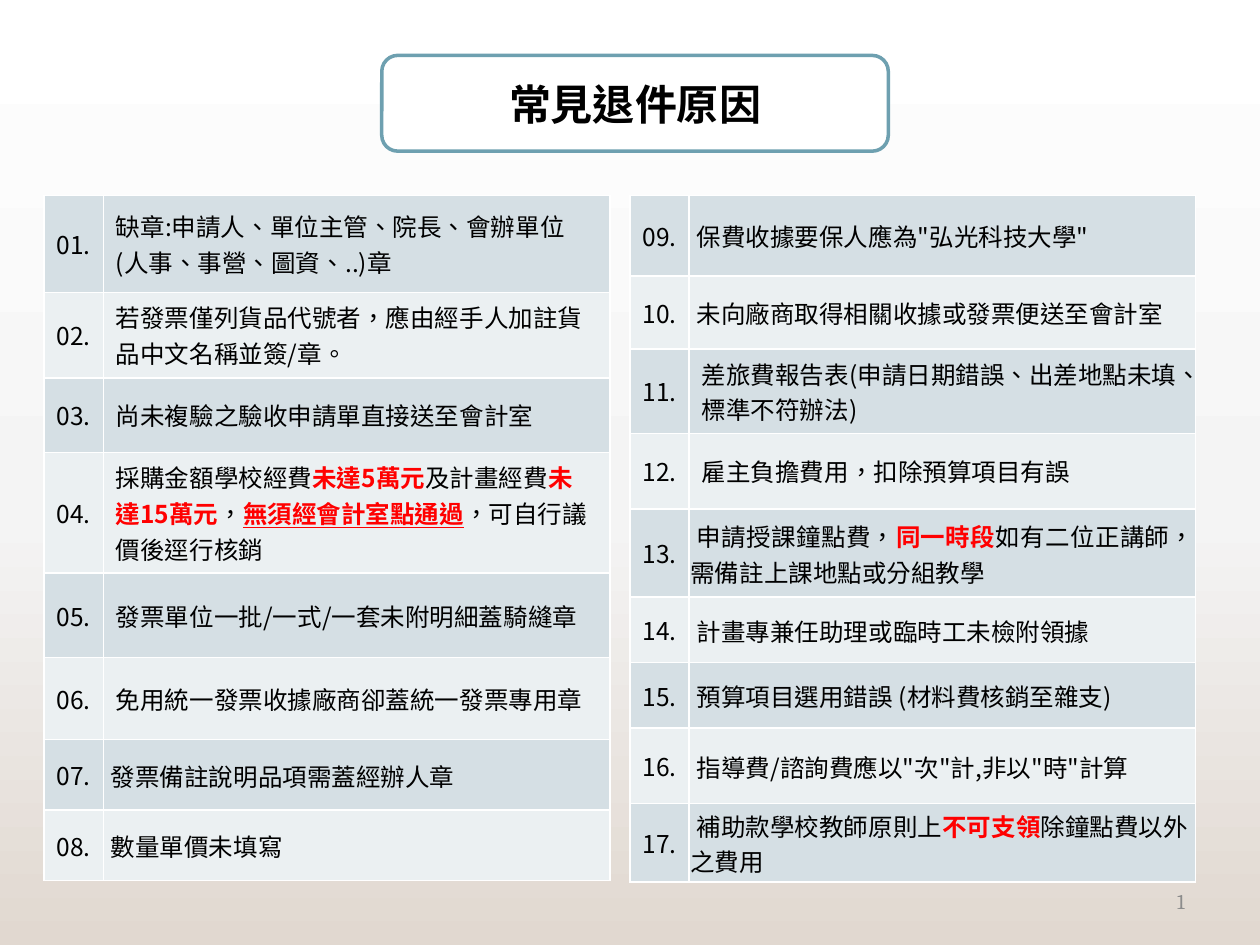
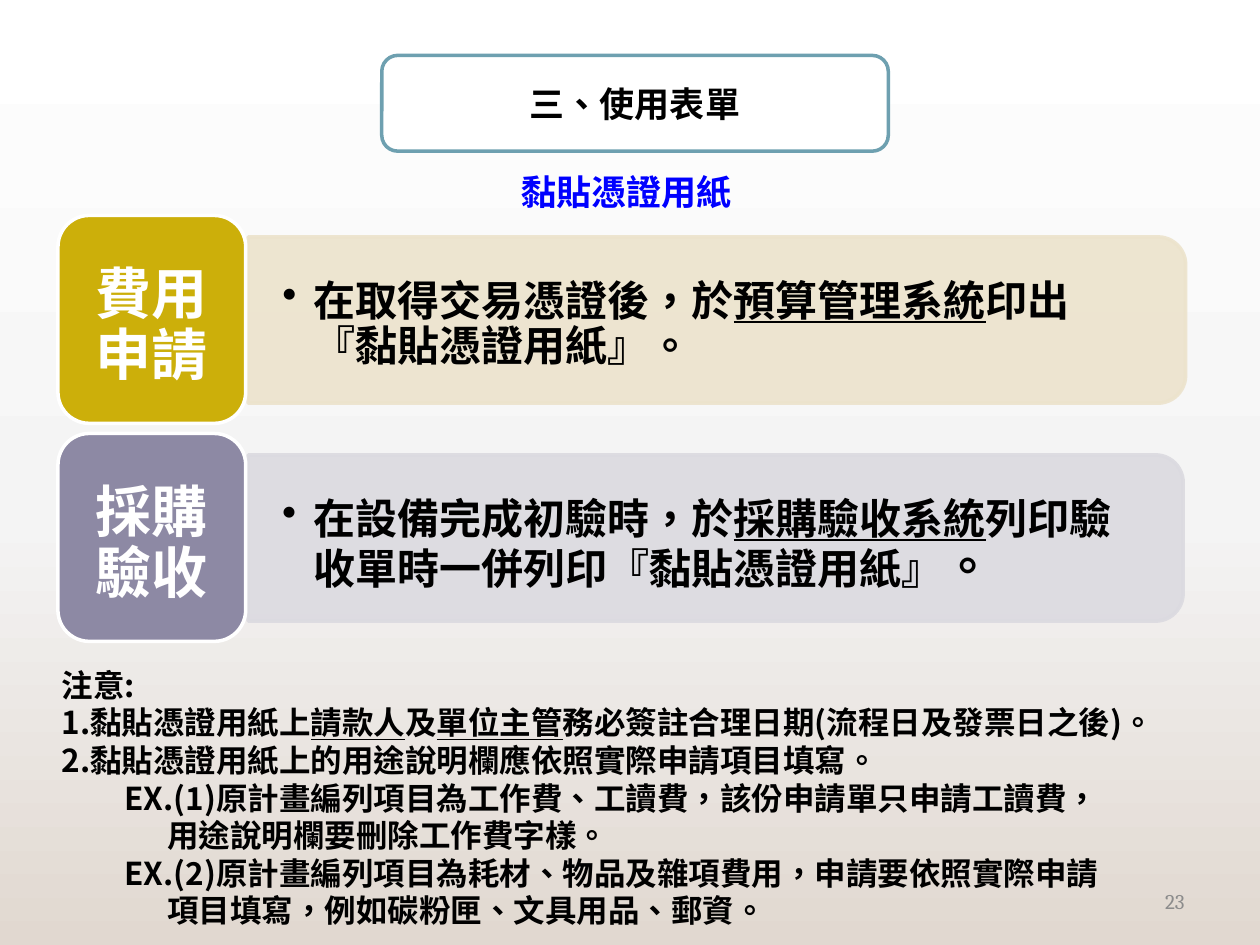
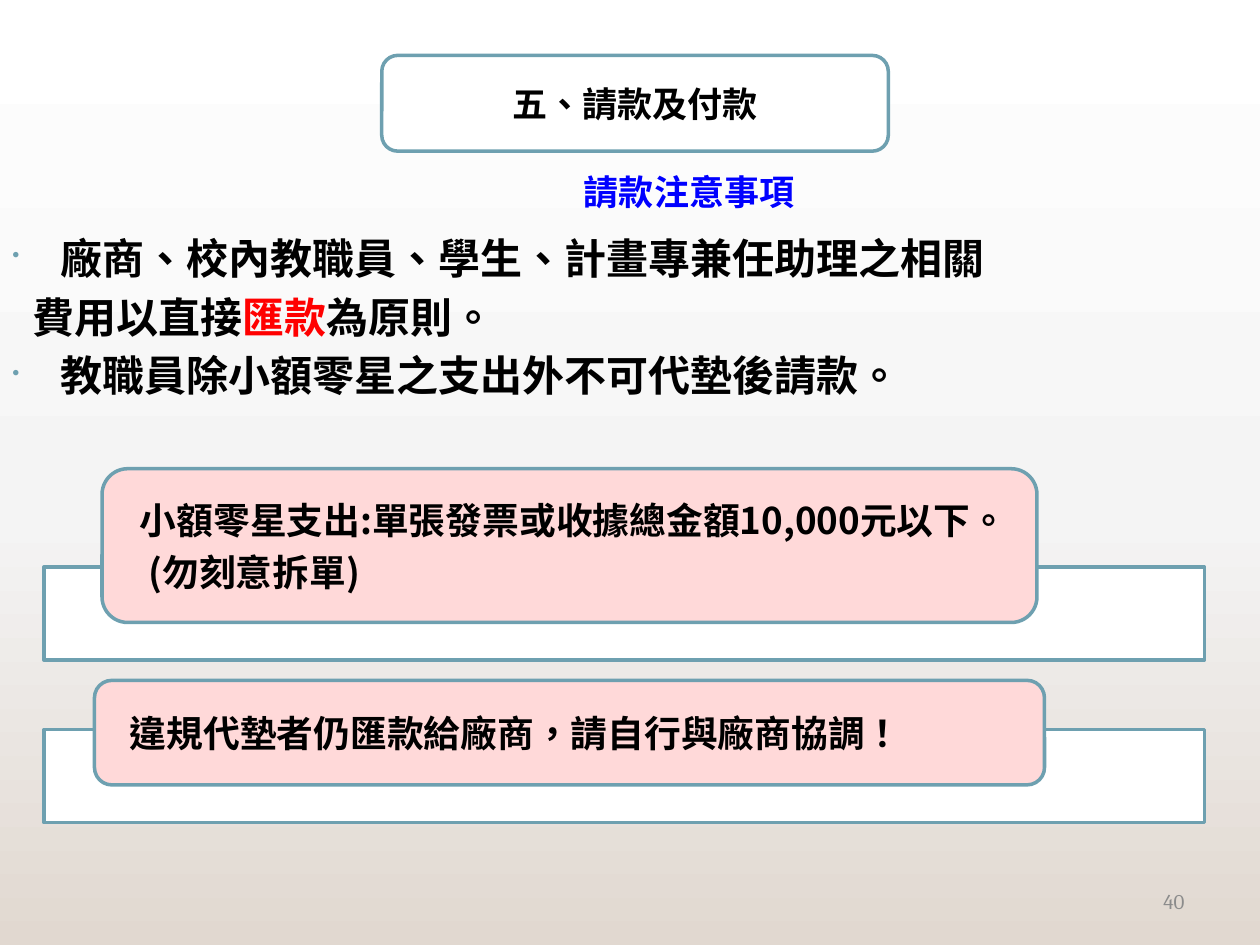
from dataclasses import dataclass

from lxml import etree
from pptx import Presentation
from pptx.dml.color import RGBColor
from pptx.enum.shapes import MSO_SHAPE
from pptx.enum.text import MSO_ANCHOR, PP_ALIGN
from pptx.oxml.ns import qn
from pptx.util import Inches, Pt

ROUND = MSO_SHAPE.ROUNDED_RECTANGLE
RECT = MSO_SHAPE.RECTANGLE
TAB = MSO_SHAPE.ROUND_2_SAME_RECTANGLE
MIDDLE, TOP = MSO_ANCHOR.MIDDLE, MSO_ANCHOR.TOP
LEFT, CENTER, RIGHT, JUSTIFY = PP_ALIGN.LEFT, PP_ALIGN.CENTER, PP_ALIGN.RIGHT, PP_ALIGN.JUSTIFY

COLORS = {
    "white": "FFFFFF", "black": "000000", "red": "FF0000", "blue": "0000FF",
    "gray": "8C8C8C", "teal": "6EA0B0", "pink": "FFD9D9",
    "row_dark": "D5DFE4", "row_light": "EBF0F2",
    "gold": "CCAF0A", "gold_pale": "ECE3CC",
    "violet": "8D89A4", "violet_pale": "DBDAE0",
}
BACKDROP = [(0, "FFFFFF"), (55000, "F4F4F4"), (100000, "E1D8D0")]
CJK, SERIF = "Noto Sans CJK SC", "Cambria"
COLUMNS, ROWS = 100, 75
INSETS = (0.1, 0.05, 0.1, 0.05)
RED = {"color": "red", "bold": True}
RED_LINE = {"color": "red", "bold": True, "underline": True}
UNDERLINE = {"underline": True}


def rgb(name):
    return RGBColor.from_string(COLORS[name])


def sub(parent, tag, **attributes):
    return etree.SubElement(parent, qn(tag), attributes)


@dataclass
class Para:
    runs: list
    left: float = 0
    first: float = 0
    bullet: str = ""
    bullet_color: str = ""
    align: PP_ALIGN = None


class Deck:
    def __init__(self):
        self.prs = Presentation()
        self.prs.slide_width, self.prs.slide_height = Inches(10), Inches(7.5)
        self.cell_w = self.prs.slide_width / COLUMNS
        self.cell_h = self.prs.slide_height / ROWS
        self.slide = None
        self.paint_backdrop()

    def paint_backdrop(self):
        master = self.prs.slide_master
        fill = master.background.fill
        fill.gradient()
        fill.gradient_angle = 270
        stops = master.element.find(".//" + qn("a:gsLst"))
        for stop in list(stops):
            stops.remove(stop)
        for position, color in BACKDROP:
            sub(sub(stops, "a:gs", pos=str(position)), "a:srgbClr", val=color)

    def area(self, col, row, width, height):
        return (round(col * self.cell_w), round(row * self.cell_h),
                round(width * self.cell_w), round(height * self.cell_h))

    def new_slide(self, number, title, **title_style):
        self.slide = self.prs.slides.add_slide(self.prs.slide_layouts[6])
        self.text((71.7, 69.5, 23.3, 4), [str(number)], size=12, color="gray",
                  face=SERIF, align=RIGHT)
        self.shape((30.3, 4.4, 40.2, 7.6), "white", "teal", texts=[title],
                   **{"size": 20, "bold": True, "align": CENTER, **title_style})

    def set_paragraphs(self, frame, texts, size=14, color="black", bold=False, face=CJK,
                       align=LEFT, line=None, before=0, after=0):
        for index, item in enumerate(texts):
            para = item if isinstance(item, Para) else Para([item])
            p = frame.paragraphs[0] if index == 0 else frame.add_paragraph()
            p.alignment = para.align or align
            if line:
                p.line_spacing = Pt(line)
            if before and index:
                p.space_before = Pt(before)
            if after and index < len(texts) - 1:
                p.space_after = Pt(after)
            props = p._p.get_or_add_pPr()
            props.set("marL", str(Inches(para.left)))
            props.set("indent", str(Inches(para.first)))
            if para.bullet_color:
                sub(sub(props, "a:buClr"), "a:srgbClr", val=COLORS[para.bullet_color])
                sub(props, "a:buSzPct", val="50000")
            if para.bullet:
                sub(props, "a:buChar", char=para.bullet)
            p.font.size, p.font.bold, p.font.name = Pt(size), bold, face
            p.font.color.rgb = rgb(color)
            defaults = props.find(qn("a:defRPr"))
            defaults.set("lang", "zh-TW")
            sub(defaults, "a:ea", typeface=CJK)
            for part in para.runs:
                words, style = (part, {}) if isinstance(part, str) else part
                run = p.add_run()
                run.text = words
                for key, value in style.items():
                    if key == "color":
                        run.font.color.rgb = rgb(value)
                    else:
                        setattr(run.font, key, value)

    def fill_frame(self, frame, texts, insets=INSETS, anchor=MIDDLE, **style):
        frame.word_wrap = True
        frame.vertical_anchor = anchor
        (frame.margin_left, frame.margin_top,
         frame.margin_right, frame.margin_bottom) = map(Inches, insets)
        self.set_paragraphs(frame, texts, **style)

    def text(self, box, texts, **style):
        holder = self.slide.shapes.add_textbox(*self.area(*box))
        self.fill_frame(holder.text_frame, texts, **style)

    def subtitle(self, col, width, words):
        self.text((col, 13.1, width, 4.2), [words], insets=(0.1, 0, 0.1, 0),
                  size=20, color="blue", bold=True, align=CENTER)

    def shape(self, box, fill, line_color, kind=ROUND, texts=None, **style):
        body = self.slide.shapes.add_shape(kind, *self.area(*box))
        body.shadow.inherit = False
        body.fill.solid()
        body.fill.fore_color.rgb = rgb(fill)
        body.line.color.rgb = rgb(line_color)
        body.line.width = Pt(2)
        if texts:
            self.fill_frame(body.text_frame, texts, **style)
        return body

    def side_tab(self, col, row, width, height, color):
        turned = (col + (width - height) / 2, row + (height - width) / 2, height, width)
        tab = self.shape(turned, color, color, TAB)
        tab.rotation = 90
        for tint in tab.element.spPr.iter(qn("a:srgbClr")):
            sub(tint, "a:alpha", val="90000")

    def step(self, row, width, label, dark, pale, runs, line):
        self.side_tab(19.7, row + 1.7, width, 13.2, pale)
        self.text((19.7, row + 2.7, width - 0.6, 11.9),
                  [Para(runs, 0.25, -0.25, "•")],
                  insets=(0.27, 0.14, 0.27, 0.14), size=24, bold=True, line=line)
        self.shape((4.6, row, 14.9, 16.5), dark, "white", texts=[label],
                   insets=(0.13, 0.1, 0.13, 0), size=32, bold=True,
                   color="white", align=CENTER, line=35)

    def notice(self, box, shelf_row, texts):
        self.shape((3.5, shelf_row, 92.1, 7.4), "white", "teal", RECT)
        self.shape(box, "pink", "teal", texts=texts, insets=(0.24, 0.03, 0.24, 0),
                   size=21, bold=True, line=22.9, after=6.85)

    def reasons(self, col, start, heights, entries, tight):
        widths = (4.7, 40.2)
        frame = self.slide.shapes.add_table(
            len(entries), 2, *self.area(col, 15.5, sum(widths), sum(heights)))
        table = frame.table
        table.first_row = table.horz_banding = False
        for column, width in zip(table.columns, widths):
            column.width = round(width * self.cell_w)
        for index, (height, entry) in enumerate(zip(heights, entries)):
            number = start + index
            table.rows[index].height = round(height * self.cell_h)
            para = entry if isinstance(entry, Para) else Para([entry])
            insets = INSETS
            if number in tight:
                para.first = 0.05
                insets = (0.01, 0.01, 0.01, 0)
            fill = "row_light" if index % 2 else "row_dark"
            self.cell(table.cell(index, 0), f"{number:02d}.", fill, (0.1, 0.05, 0, 0.05))
            self.cell(table.cell(index, 1), para, fill, insets)

    def cell(self, cell, content, fill, insets):
        cell.vertical_anchor = MIDDLE
        (cell.margin_left, cell.margin_top,
         cell.margin_right, cell.margin_bottom) = map(Inches, insets)
        props = cell._tc.get_or_add_tcPr()
        for side in ("a:lnL", "a:lnR", "a:lnT", "a:lnB"):
            border = sub(props, side, w=str(Pt(1)))
            sub(sub(border, "a:solidFill"), "a:srgbClr", val=COLORS["white"])
        cell.fill.solid()
        cell.fill.fore_color.rgb = rgb(fill)
        self.set_paragraphs(cell.text_frame, [content])


def rejection_reasons(deck):
    deck.new_slide(1, "常見退件原因", size=24, face=SERIF)
    deck.reasons(3.5, 1, (7.7, 6.8, 5.9, 9.6, 6.7, 6.5, 5.6, 5.6), [
        "缺章:申請人、單位主管、院長、會辦單位(人事、事營、圖資、..)章",
        "若發票僅列貨品代號者，應由經手人加註貨品中文名稱並簽/章。",
        "尚未複驗之驗收申請單直接送至會計室",
        Para(["採購金額學校經費", ("未達5萬元", RED), "及計畫經費", ("未達15萬元", RED),
              "，", ("無須經會計室點通過", RED_LINE), "，可自行議價後逕行核銷"]),
        "發票單位一批/一式/一套未附明細蓋騎縫章",
        "免用統一發票收據廠商卻蓋統一發票專用章",
        "發票備註說明品項需蓋經辦人章",
        "數量單價未填寫",
    ], {7, 8})
    deck.reasons(50, 9, (6.4, 5.8, 6.7, 6, 7, 5.2, 5.2, 6, 6.2), [
        "保費收據要保人應為\"弘光科技大學\"",
        "未向廠商取得相關收據或發票便送至會計室",
        "差旅費報告表(申請日期錯誤、出差地點未填、標準不符辦法)",
        "雇主負擔費用，扣除預算項目有誤",
        Para(["申請授課鐘點費，", ("同一時段", RED),
              "如有二位正講師，需備註上課地點或分組教學"], align=JUSTIFY),
        "計畫專兼任助理或臨時工未檢附領據",
        "預算項目選用錯誤 (材料費核銷至雜支)",
        "指導費/諮詢費應以\"次\"計,非以\"時\"計算",
        Para(["補助款學校教師原則上", ("不可支領", RED), "除鐘點費以外之費用"]),
    ], {9, 10, 13, 14, 15, 16, 17})


def voucher_form(deck):
    deck.new_slide(23, "三、使用表單")
    deck.step(17.1, 74.4, "費用申請", "gold", "gold_pale",
              ["在取得交易憑證後，於", ("預算管理系統", UNDERLINE),
               "印出『黏貼憑證用紙』。"], 25.7)
    deck.step(34.4, 74.2, "採購驗收", "violet", "violet_pale",
              ["在設備完成初驗時，於", ("採購驗收系統", UNDERLINE),
               "列印驗收單時一併列印『黏貼憑證用紙』",
               ("。", {"size": Pt(28), "name": "Arial"})], 29.7)
    deck.text((3.9, 52, 94.1, 22.6), [
        "注意:",
        Para(["1.黏貼憑證用紙上", ("請款人", UNDERLINE), "及", ("單位主管", UNDERLINE),
              "務必簽註合理日期(流程日及發票日之後)。"]),
        "2.黏貼憑證用紙上的用途說明欄應依照實際申請項目填寫。",
        Para(["EX.(1)原計畫編列項目為工作費、工讀費，該份申請單只申請工讀費，"], 0.5),
        Para(["用途說明欄要刪除工作費字樣。"], 0.84),
        Para(["EX.(2)原計畫編列項目為耗材、物品及雜項費用，申請要依照實際申請"], 0.5),
        Para(["項目填寫，例如碳粉匣、文具用品、郵資。"], 0.84),
    ], size=18, bold=True, line=21.5)
    deck.subtitle(3.7, 92.1, "黏貼憑證用紙")


def payment_rules(deck):
    deck.new_slide(40, "五、請款及付款")
    deck.text((0, 18, 90, 53.3), [
        Para(["廠商、校內教職員、學生、計畫專兼任助理之相關"], 0.38, -0.38, "•", "teal"),
        Para(["費用以直接", ("匯款", RED), "為原則。"], 0.16),
        Para(["教職員除小額零星之支出外不可代墊後請款。"], 0.38, -0.38, "•", "teal"),
    ], anchor=TOP, size=24, bold=True, line=28.7, before=4.8)
    deck.subtitle(9.7, 90, "請款注意事項")
    deck.notice((8.1, 37.2, 74.2, 12.2), 45, [
        "小額零星支出:單張發票或收據總金額10,000元以下。",
        Para(["(勿刻意拆單)"], 0.07),
    ])
    deck.notice((7.5, 54, 75.4, 8.3), 57.9, ["違規代墊者仍匯款給廠商，請自行與廠商協調！"])


def main():
    deck = Deck()
    rejection_reasons(deck)
    voucher_form(deck)
    payment_rules(deck)
    deck.prs.save("out.pptx")


if __name__ == "__main__":
    main()
